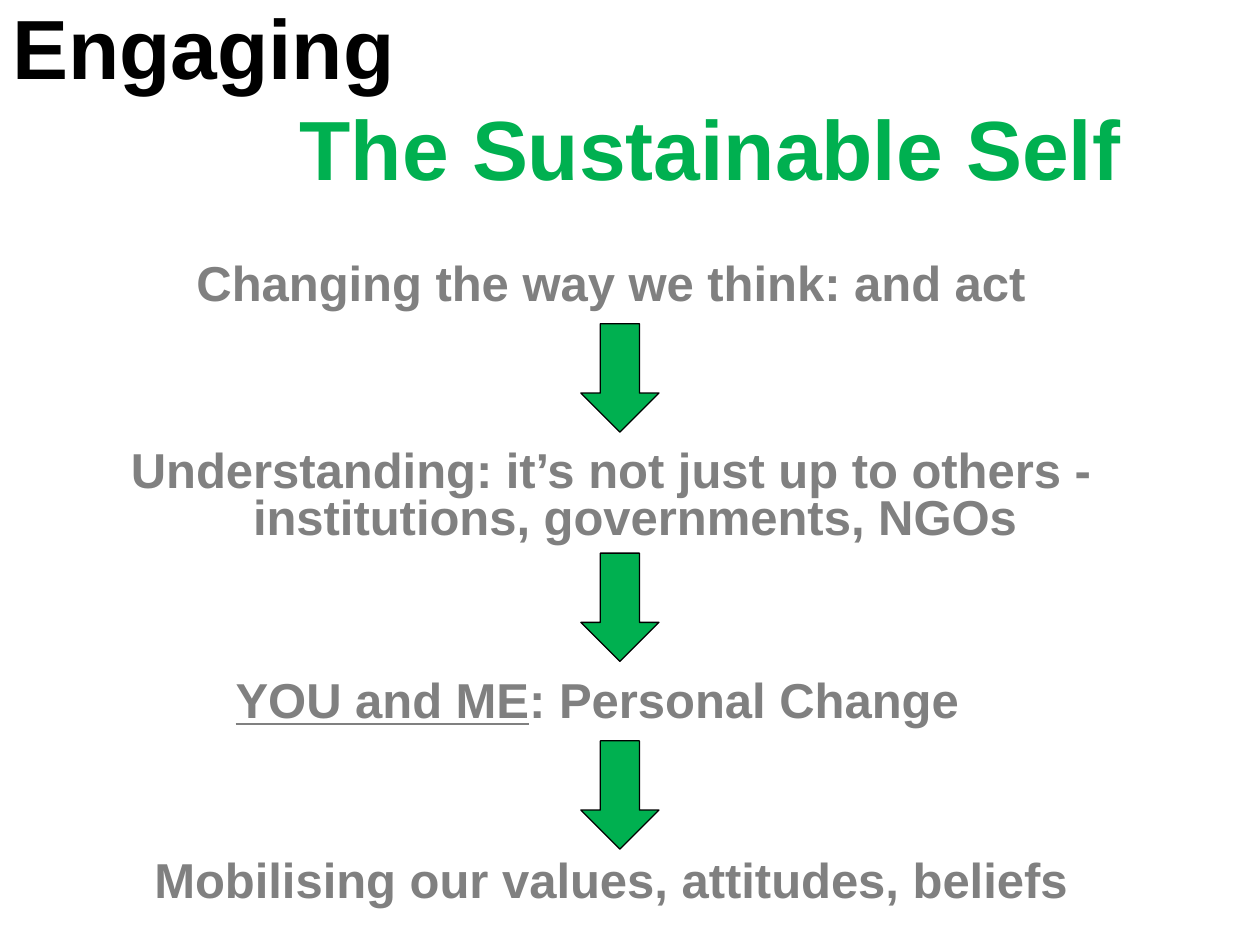
from dataclasses import dataclass

from pptx import Presentation
from pptx.dml.color import RGBColor as RGB
from pptx.enum.shapes import MSO_SHAPE as Shape
from pptx.enum.text import MSO_ANCHOR as Anchor, PP_ALIGN as Align
from pptx.util import Inches, Pt


@dataclass(frozen=True)
class Theme:
    font: str = "Arial"
    black: RGB = RGB(0, 0, 0)
    green: RGB = RGB(0x00, 0xB0, 0x50)
    grey: RGB = RGB(0x80, 0x80, 0x80)
    title_pt: float = 48
    body_pt: float = 28
    outline_pt: float = 0.75


@dataclass(frozen=True)
class Step:
    text: str
    before: float = 0
    underlined: str = ""
    right: float = 0


THEME = Theme()
STEPS = (
    Step("Changing the way we think: and act"),
    Step("Understanding: it’s not just up to others - institutions, governments, NGOs", 80),
    Step(": Personal Change", 78, "YOU and ME", 0.22),
    Step("Mobilising our values, attitudes, beliefs", 76),
)
ARROW_LEFT, ARROW_WIDTH, ARROW_HEIGHT = 4.61, 0.62, 0.86
ARROW_TOPS = (2.57, 4.39, 5.88)


def add_box(s, left: float, top: float, width: float, height: float, *,
            anchor=Anchor.TOP, inset_top: float = 0.05):
    tf = s.shapes.add_textbox(Inches(left), Inches(top), Inches(width), Inches(height)).text_frame
    tf.word_wrap = True
    tf.vertical_anchor = anchor
    tf.margin_top = Inches(inset_top)
    return tf


def add_paragraph(tf, *, align=Align.LEFT, before: float = 0, spacing: float = 1.0,
                  left: float = 0, hanging: float = 0, right: float = 0):
    p = tf.paragraphs[0] if not tf.paragraphs[0].runs else tf.add_paragraph()
    p.alignment = align
    p.space_before = Pt(before)
    p.line_spacing = spacing
    for name, value in (("marL", left), ("indent", -hanging), ("marR", right)):
        p._p.get_or_add_pPr().set(name, str(Inches(value)))
    return p


def add_text(p, text: str, *, size: float, color: RGB, underline: bool = False) -> None:
    r = p.add_run()
    r.text = text
    font = r.font
    font.name, font.size, font.bold = THEME.font, Pt(size), True
    font.underline = underline
    font.color.rgb = color


def add_title(s) -> None:
    tf = add_box(s, 0, 0.14, 9.43, 1.25, anchor=Anchor.MIDDLE)
    for text, color, left in (("Engaging", THEME.black, 0),
                              ("The Sustainable Self", THEME.green, 2.28)):
        add_text(add_paragraph(tf, left=left), text, size=THEME.title_pt, color=color)


def add_steps(s) -> None:
    tf = add_box(s, 0.35, 1.52, 9, 5.98, inset_top=0.57)
    for step in STEPS:
        p = add_paragraph(tf, align=Align.CENTER, before=step.before, spacing=0.8,
                          left=0.38, hanging=0.38, right=step.right)
        if step.underlined:
            add_text(p, step.underlined, size=THEME.body_pt, color=THEME.grey, underline=True)
        add_text(p, step.text, size=THEME.body_pt, color=THEME.grey)


def add_arrow(s, top: float) -> None:
    sp = s.shapes.add_shape(Shape.DOWN_ARROW, Inches(ARROW_LEFT), Inches(top),
                            Inches(ARROW_WIDTH), Inches(ARROW_HEIGHT))
    sp.shadow.inherit = False
    sp.fill.solid()
    sp.fill.fore_color.rgb = THEME.green
    sp.line.color.rgb = THEME.black
    sp.line.width = Pt(THEME.outline_pt)


def main() -> None:
    prs = Presentation()
    prs.slide_width, prs.slide_height = Inches(10), Inches(7.5)
    s = prs.slides.add_slide(prs.slide_layouts[6])
    add_title(s)
    add_steps(s)
    for top in ARROW_TOPS:
        add_arrow(s, top)
    prs.save("out.pptx")


if __name__ == "__main__":
    main()
